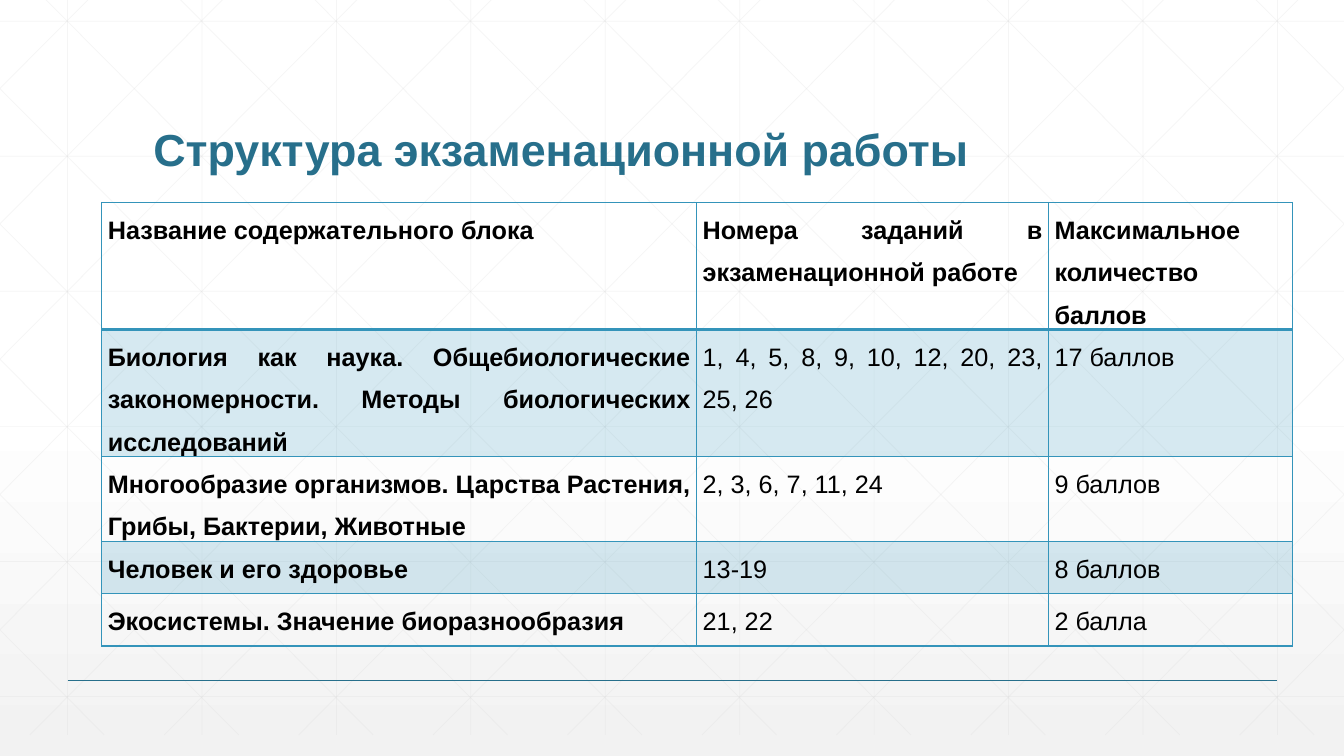
from pptx import Presentation
from pptx.dml.color import RGBColor
from pptx.enum.shapes import MSO_CONNECTOR
from pptx.enum.text import MSO_ANCHOR, MSO_AUTO_SIZE, PP_ALIGN
from pptx.oxml.ns import qn
from pptx.oxml.xmlchemy import OxmlElement
from pptx.util import Inches, Pt

STRAIGHT = MSO_CONNECTOR.STRAIGHT
BOTTOM = MSO_ANCHOR.BOTTOM
NO_FIT = MSO_AUTO_SIZE.NONE
LEFT = PP_ALIGN.LEFT
JUSTIFY = PP_ALIGN.JUSTIFY

COLORS = {
    "white": "FFFFFF",
    "base": "F2F2F2",
    "grid": "D9D9D9",
    "title": "276F8B",
    "accent": "3494BA",
    "text": "000000",
}
FONT = "Arial"
WIDTH, HEIGHT = 13.33, 7.5
TOP, FLOOR = -0.21, 7.29
STEP = 4 / 3
RUN = 7.45

TITLE = "Структура экзаменационной работы"
COLS = [5.9, 3.49, 2.42]
ROWS = [
    (1.25, ["Название содержательного блока", "Номера заданий в экзаменационной работе",
            "Максимальное количество баллов"]),
    (1.26, ["Биология как наука. Общебиологические закономерности. Методы биологических исследований",
            "1, 4, 5, 8, 9, 10, 12, 20, 23, 25, 26", "17 баллов"]),
    (0.83, ["Многообразие организмов. Царства Растения, Грибы, Бактерии, Животные",
            "2, 3, 6, 7, 11, 24", "9 баллов"]),
    (0.52, ["Человек и его здоровье", "13-19", "8 баллов"]),
    (0.52, ["Экосистемы. Значение биоразнообразия", "21, 22", "2 балла"]),
]


def rgb(name):
    return RGBColor.from_string(COLORS[name])


def add(parent, tag, **attrs):
    node = OxmlElement(tag)
    for key, value in attrs.items():
        node.set(key, str(value))
    parent.append(node)
    return node


def fade(node, percent):
    color = next(node.iter(qn("a:srgbClr")))
    add(color, "a:alpha", val=percent * 1000)


class Page:
    def __init__(self, deck):
        self.slide = deck.slides.add_slide(deck.slide_layouts[5])
        self.shapes = self.slide.shapes

    def backdrop(self):
        fill = self.slide.background.fill
        fill.gradient()
        fill.gradient_angle = 270
        stops = [(0.53, "white"), (1, "base")]
        for stop, (place, name) in zip(fill.gradient_stops, stops):
            stop.position = place
            stop.color.rgb = rgb(name)

    def line(self, start, end, color, width, alpha=100):
        ends = [Inches(value) for value in (*start, *end)]
        line = self.shapes.add_connector(STRAIGHT, *ends)
        line.line.color.rgb = rgb(color)
        line.line.width = Pt(width)
        props = line._element.spPr
        if alpha < 100:
            fade(props, alpha)
        add(props, "a:effectLst")

    def grid(self):
        lines = []
        for i in range(10):
            x = 0.67 + i * STEP
            lines.append(((x, TOP), (x, FLOOR)))
        for i in range(6):
            y = 0.21 + i * 1.34
            lines.append(((0, y), (WIDTH, y)))
        slope = (FLOOR - TOP) / RUN
        for i in range(-5, 10):
            x = 0.25 + i * STEP
            left, right = max(x, 0), min(x + RUN, WIDTH)
            y1, y2 = (TOP + (end - x) * slope for end in (left, right))
            lines.append(((left, y1), (right, y2)))
            lines.append(((WIDTH - left, y1), (WIDTH - right, y2)))
        for start, end in lines:
            self.line(start, end, "grid", 0.5, 25)

    def style(self, para, size, color, bold, align, space):
        para.alignment = align
        para.line_spacing = space
        for run in para.runs:
            font = run.font
            font.name = FONT
            font.size = Pt(size)
            font.bold = bold
            font.color.rgb = rgb(color)

    def title(self, text):
        shape = self.shapes.title
        shape.left, shape.top = Inches(1.42), Inches(0.55)
        shape.width, shape.height = Inches(10.5), Inches(1.25)
        frame = shape.text_frame
        frame.text = text
        frame.word_wrap = True
        frame.auto_size = NO_FIT
        frame.vertical_anchor = BOTTOM
        self.style(frame.paragraphs[0], 32, "title", True, LEFT, 0.9)
        self.shapes._spTree.append(shape._element)

    def border(self, cell, widths):
        props = cell._tc.get_or_add_tcPr()
        for i, (side, width) in enumerate(zip("LRTB", widths)):
            edge = OxmlElement("a:ln" + side)
            edge.set("w", str(Pt(width)))
            fill = add(edge, "a:solidFill")
            add(fill, "a:srgbClr", val=COLORS["accent"])
            props.insert(i, edge)

    def cell(self, cell, text, row, col):
        cell.margin_left = cell.margin_right = Inches(0.06)
        cell.margin_top = cell.margin_bottom = 0
        cell.text_frame.text = text
        bold = row == 0 or col == 0
        self.style(cell.text_frame.paragraphs[0], 18, "text", bold, JUSTIFY, 1.5)
        if row % 2:
            cell.fill.solid()
            cell.fill.fore_color.rgb = rgb("accent")
            fade(cell._tc.tcPr, 20)
        else:
            cell.fill.background()
        above = 2 if row == 1 else 1
        below = 2 if row == 0 else 1
        self.border(cell, (1, 1, above, below))

    def table(self, left, top, cols, rows):
        width, height = sum(cols), sum(size for size, texts in rows)
        frame = self.shapes.add_table(len(rows), len(cols), Inches(left), Inches(top),
                                      Inches(width), Inches(height))
        table = frame.table
        table.first_row = table.horz_banding = False
        for col, size in zip(table.columns, cols):
            col.width = Inches(size)
        for r, (size, texts) in enumerate(rows):
            table.rows[r].height = Inches(size)
            for c, text in enumerate(texts):
                self.cell(table.cell(r, c), text, r, c)


def main():
    deck = Presentation()
    deck.slide_width, deck.slide_height = Inches(WIDTH), Inches(HEIGHT)
    page = Page(deck)
    page.backdrop()
    page.grid()
    page.line((0.67, 6.75), (12.67, 6.75), "title", 1)
    page.title(TITLE)
    page.table(1.01, 2.01, COLS, ROWS)
    deck.save("out.pptx")


if __name__ == "__main__":
    main()
